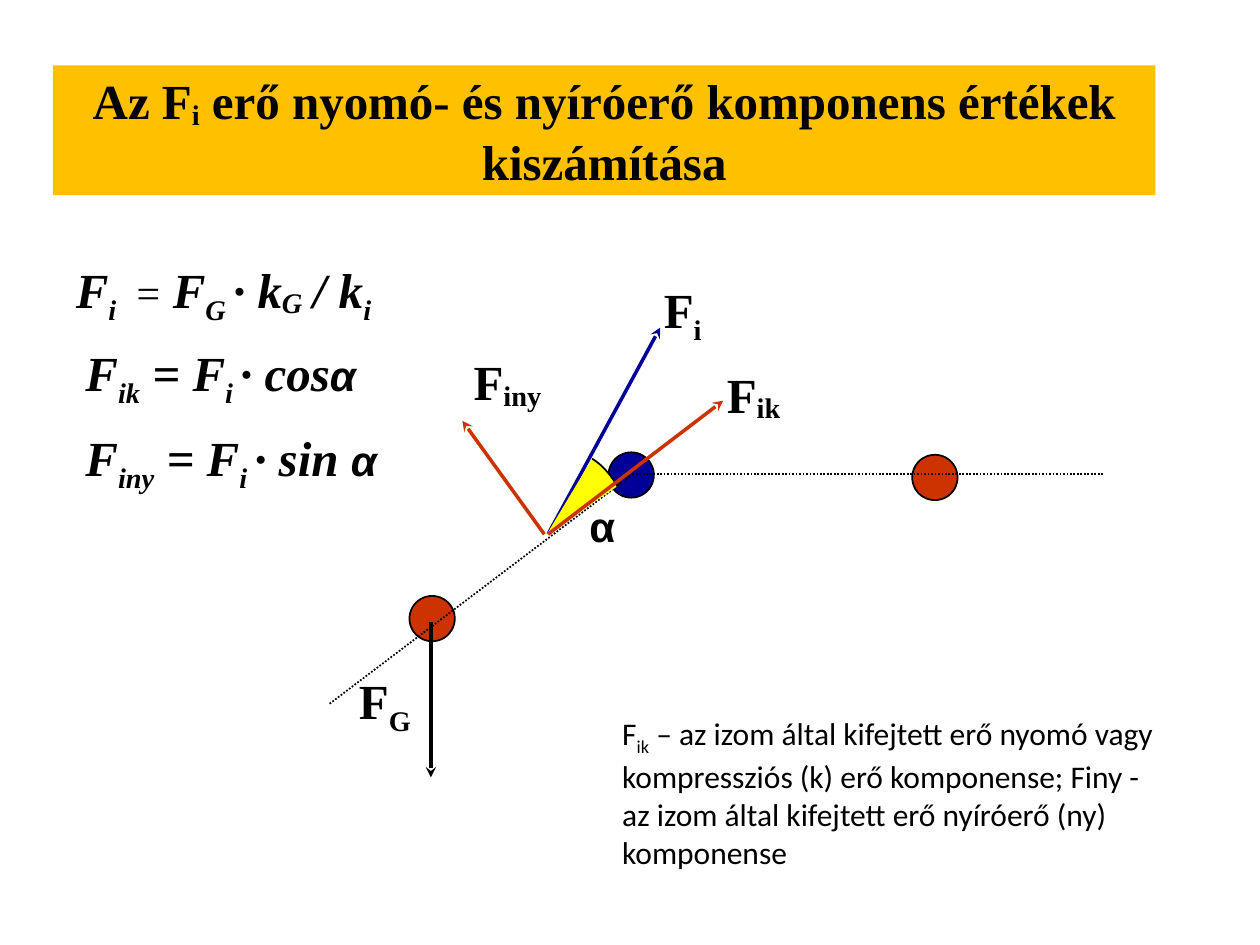
import lxml.etree
import pptx
import pptx.dml.color
import pptx.enum.dml
import pptx.enum.shapes
import pptx.enum.text
import pptx.oxml.ns
import pptx.util
from pptx.util import Inches

BLACK = pptx.dml.color.RGBColor(0x00, 0x00, 0x00)
RED = pptx.dml.color.RGBColor(0xCC, 0x33, 0x00)
BLUE = pptx.dml.color.RGBColor(0x00, 0x00, 0x99)
YELLOW = pptx.dml.color.RGBColor(0xFF, 0xFF, 0x00)
GOLD = pptx.dml.color.RGBColor(0xFF, 0xC0, 0x00)
SERIF = "Times New Roman"


def write(shape, runs, italic=False):
    """Each run is (text, baseline %, size, font, bold), the last four optional."""
    frame = shape.text_frame
    frame.word_wrap = True
    frame.auto_size = pptx.enum.text.MSO_AUTO_SIZE.SHAPE_TO_FIT_TEXT
    defaults = ("", 0, 28, SERIF, True)
    for part in runs:
        text, baseline, size, font, bold = part + defaults[len(part):]
        run = frame.paragraphs[0].add_run()
        run.text = text
        run.font.size = pptx.util.Pt(size)
        run.font.name = font
        run.font.bold = bold
        run.font.italic = italic
        run.font.color.rgb = BLACK
        if baseline:
            run.font._element.set("baseline", str(baseline * 1000))


def draw_line(start, end, color, arrow):
    line = slide.shapes.add_connector(
        pptx.enum.shapes.MSO_CONNECTOR.STRAIGHT, *map(Inches, start + end))
    line.line.color.rgb = color
    line.line.width = pptx.util.Pt(2 if arrow else 1)
    if arrow:
        lxml.etree.SubElement(line.line._get_or_add_ln(),
                              pptx.oxml.ns.qn("a:tailEnd"), type="stealth")
    else:
        line.line.dash_style = pptx.enum.dml.MSO_LINE.ROUND_DOT
    lxml.etree.SubElement(line._element.spPr, pptx.oxml.ns.qn("a:effectLst"))


deck = pptx.Presentation()
deck.slide_width, deck.slide_height = Inches(10), Inches(7.5)
slide = deck.slides.add_slide(deck.slide_layouts[6])

# Joint and load points
for left, top, color in [(7.24, 3.61, RED), (3.25, 4.73, RED), (4.83, 3.59, BLUE)]:
    ball = slide.shapes.add_shape(pptx.enum.shapes.MSO_SHAPE.OVAL, Inches(left),
                                  Inches(top), Inches(0.36), Inches(0.36))
    ball.shadow.inherit = False
    ball.fill.solid()
    ball.fill.fore_color.rgb = color
    ball.line.color.rgb = BLACK
    ball.line.width = pptx.util.Pt(1)

# Limb axes and load force
draw_line((5, 3.78), (2.61, 5.59), BLACK, arrow=False)
draw_line((5.02, 3.76), (8.75, 3.76), BLACK, arrow=False)
draw_line((3.42, 4.94), (3.42, 6.17), BLACK, arrow=True)

# Title
title = slide.shapes.add_shape(pptx.enum.shapes.MSO_SHAPE.RECTANGLE, Inches(0.42),
                               Inches(0.52), Inches(8.75), Inches(1.03))
title.shadow.inherit = False
title.fill.solid()
title.fill.fore_color.rgb = GOLD
title.line.fill.background()
write(title, [("Az F",), ("i", -12),
              (" erő nyomó- és nyíróerő komponens értékek kiszámítása",)])
title.text_frame.paragraphs[0].alignment = pptx.enum.text.PP_ALIGN.CENTER

# Muscle force and its shear component
draw_line((4.35, 4.24), (5.24, 2.6), BLUE, arrow=True)
draw_line((4.32, 4.24), (3.67, 3.34), RED, arrow=True)

# Angle sector: yellow wedge, then its outlined arc
curve = [(4.7, 3.64), (4.78, 3.69), (4.85, 3.77), (4.9, 3.86)]
arc = []
for step in range(13):
    t = step / 12
    weights = ((1 - t) ** 3, 3 * t * (1 - t) ** 2, 3 * t ** 2 * (1 - t), t ** 3)
    arc.append(tuple(Inches(sum(w * p[axis] for w, p in zip(weights, curve)))
                     for axis in (0, 1)))
apex = (Inches(4.34), Inches(4.24))
for points, closed in [(arc + [apex], True), (arc, False)]:
    builder = slide.shapes.build_freeform(*points[0])
    builder.add_line_segments(points[1:], close=closed)
    sector = builder.convert_to_shape()
    sector.shadow.inherit = False
    if closed:
        sector.fill.solid()
        sector.fill.fore_color.rgb = YELLOW
        sector.line.fill.background()
    else:
        sector.fill.background()
        sector.line.color.rgb = BLACK
        sector.line.width = pptx.util.Pt(1)

# Compressive component
draw_line((4.35, 4.24), (5.74, 3.18), RED, arrow=True)

# Force labels, equations and explanation
alpha = ("α", 0, 24, "Arial")
texts = [
    ((2.75, 5.27, 0.67, 0.57), False, [("F",), ("G", -25)]),
    ((5.17, 2.17, 0.67, 0.57), False, [("F",), ("i", -25)]),
    ((5.67, 2.84, 0.92, 0.57), False, [("F",), ("ik", -12)]),
    ((3.66, 2.74, 1.18, 0.57), False, [("F",), ("iny", -12)]),
    ((4.58, 3.92, 0.5, 0.5), False, [alpha]),
    ((0.42, 2.01, 3.25, 0.57), True,
     [(" ", 0, 24, SERIF, False), ("F",), ("i ", -25), (" = ", 0, 24, SERIF, False),
      ("F",), ("G ", -25), ("· k",), ("G", -10), (" ", 0, 24, SERIF, False),
      ("/ k",), ("i", -25)]),
    ((0.58, 2.67, 2.58, 0.57), True,
     [("F",), ("ik", -25), (" = F",), ("i ", -25), ("· cos",), alpha]),
    ((0.58, 3.34, 2.75, 0.57), True,
     [("F",), ("iny", -25), (" = F",), ("i ", -25), ("· sin ",), alpha]),
    ((4.84, 5.62, 4.53, 1.31), False,
     [("F", 0, 18, "Calibri", False), ("ik", -25, 18, "Calibri", False),
      (" – az izom által kifejtett erő nyomó vagy kompressziós (k) erő komponense; "
       "Finy - az izom által kifejtett erő nyíróerő (ny) komponense",
       0, 18, "Calibri", False)]),
]
for place, italic, runs in texts:
    write(slide.shapes.add_textbox(*map(Inches, place)), runs, italic)

deck.save("out.pptx")
